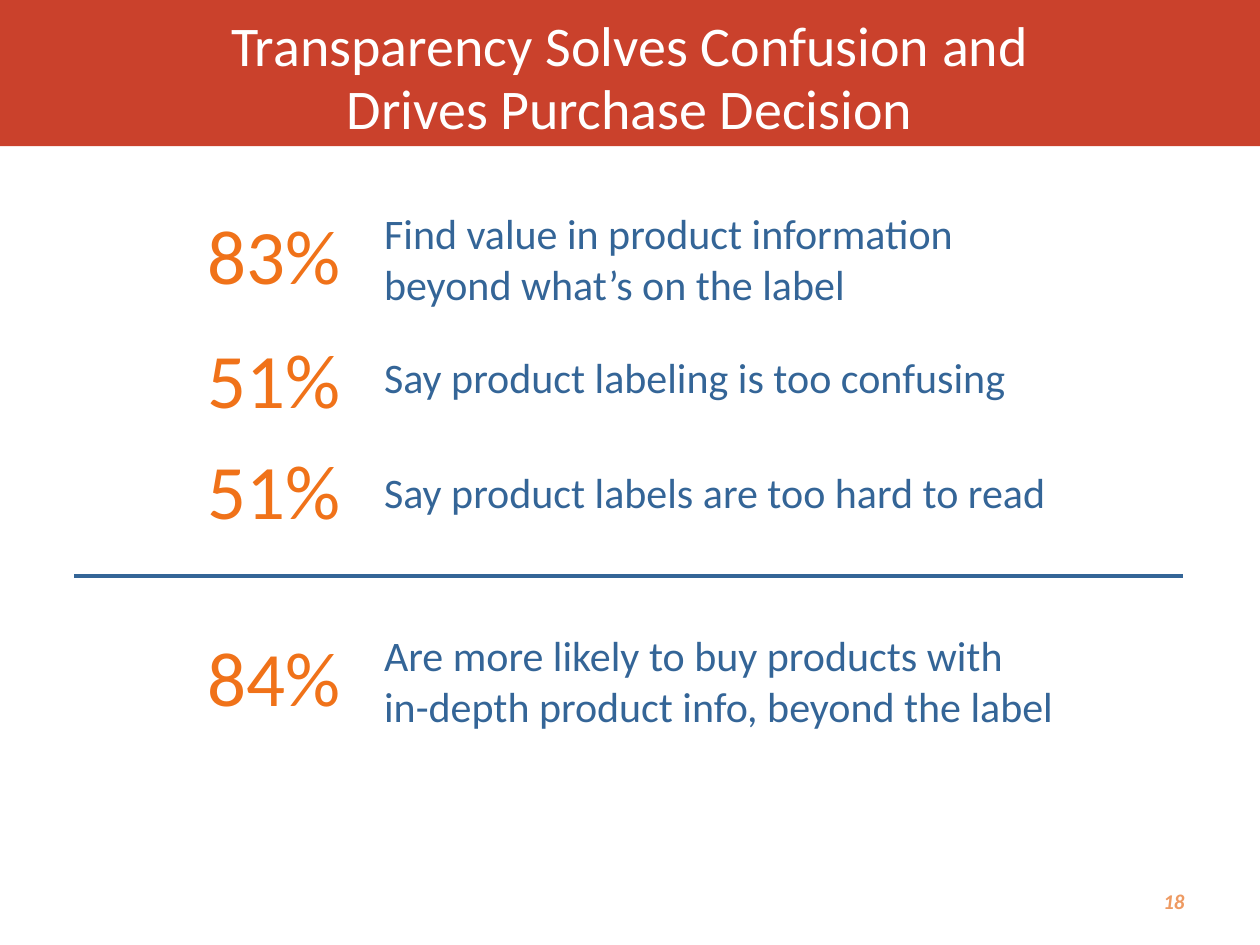
import pptx
import pptx.util
import pptx.dml.color
import pptx.enum.shapes
import pptx.enum.text
from lxml import etree

RED = pptx.dml.color.RGBColor(0xCA, 0x41, 0x2C)
WHITE = pptx.dml.color.RGBColor(0xFF, 0xFF, 0xFF)
ORANGE = pptx.dml.color.RGBColor(0xF0, 0x72, 0x19)
PEACH = pptx.dml.color.RGBColor(0xEE, 0x9A, 0x62)
BLUE = pptx.dml.color.RGBColor(0x34, 0x65, 0x97)

ALIGN = pptx.enum.text.PP_ALIGN
ANCHOR = pptx.enum.text.MSO_ANCHOR
AUTO = pptx.enum.text.MSO_AUTO_SIZE

WIDTH, HEIGHT = 10, 7.5
PERCENT_COL, CLAIM_COL = 1.55, 2.95

FINDINGS = [
    ("83%", "Find value in product information beyond what’s on the label", 1.6, 1.6, 5.55, 0.91),
    ("51%", "Say product labeling is too confusing", 2.58, 2.74, 5.18, 0.5),
    ("51%", "Say product labels are too hard to read", 3.46, 3.65, 5.48, 0.5),
    ("84%", "Are more likely to buy products with in-depth product info, beyond the label",
     4.95, 4.95, 5.52, 0.91),
]


def inches(*values):
    return [pptx.util.Inches(v) for v in values]


def write(tf, text, size, color, bold=False, italic=False, align=ALIGN.LEFT,
          anchor=ANCHOR.TOP, wrap=True, auto=AUTO.NONE, spacing=None):
    tf.word_wrap = wrap
    tf.auto_size = auto
    tf.vertical_anchor = anchor
    p = tf.paragraphs[0]
    p.text = text
    p.alignment = align
    if spacing:
        p.line_spacing = pptx.util.Pt(spacing)
    for r in p.runs:
        r.font.name = "Calibri"
        r.font.size = pptx.util.Pt(size)
        r.font.color.rgb = color
        r.font.bold = bold
        r.font.italic = italic


def add_text(shapes, box, text, **fmt):
    sp = shapes.add_textbox(*inches(*box))
    write(sp.text_frame, text, **fmt)


def add_header(s, text):
    band = s.shapes.add_shape(pptx.enum.shapes.MSO_SHAPE.RECTANGLE, *inches(0, 0, WIDTH, 1.16))
    band.shadow.inherit = False
    band.fill.solid()
    band.fill.fore_color.rgb = RED
    band.line.fill.background()
    title = s.shapes.title
    title.left, title.top, title.width, title.height = inches(0, -0.01, WIDTH, 1.25)
    title._element.addprevious(band._element)
    write(title.text_frame, text, size=32, color=WHITE, align=ALIGN.CENTER,
          anchor=ANCHOR.MIDDLE, spacing=36)


def add_finding(s, percent, claim, percent_top, claim_top, claim_width, claim_height):
    group = s.shapes.add_group_shape()
    add_text(group.shapes, (PERCENT_COL, percent_top, 1.27, 0.84), percent,
             size=44, color=ORANGE, wrap=False, auto=AUTO.SHAPE_TO_FIT_TEXT)
    add_text(group.shapes, (CLAIM_COL, claim_top, claim_width, claim_height), claim,
             size=24, color=BLUE, auto=AUTO.SHAPE_TO_FIT_TEXT)


def add_rule(s, left, right, y):
    line = s.shapes.add_connector(pptx.enum.shapes.MSO_CONNECTOR.STRAIGHT,
                                  *inches(left, y, right, y))
    line.line.color.rgb = BLUE
    line.line.width = pptx.util.Pt(2)
    etree.SubElement(line._element.spPr, pptx.oxml.ns.qn("a:effectLst"))


def main():
    prs = pptx.Presentation()
    prs.slide_width, prs.slide_height = inches(WIDTH, HEIGHT)
    s = prs.slides.add_slide(prs.slide_layouts[5])
    add_header(s, "Transparency Solves Confusion and\vDrives Purchase Decision")
    add_text(s.shapes, (7.17, 6.95, 2.33, 0.4), "18", size=12, color=PEACH,
             bold=True, italic=True, align=ALIGN.RIGHT, anchor=ANCHOR.MIDDLE)
    for finding in FINDINGS:
        add_finding(s, *finding)
    add_rule(s, 0.59, 9.39, 4.57)
    prs.save("out.pptx")


if __name__ == "__main__":
    main()
